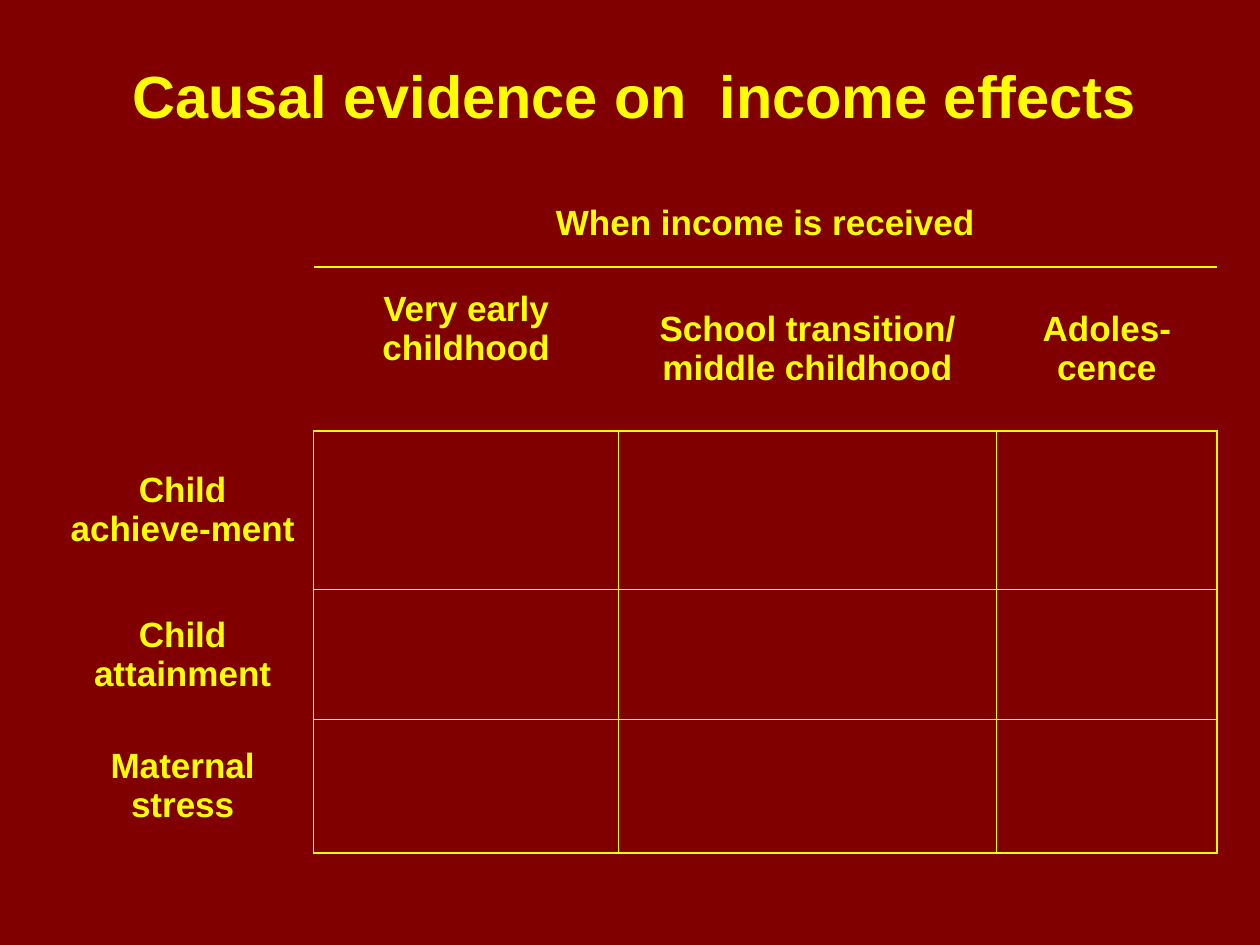
"""Build a slide with an empty evidence grid of outcomes by timing of income."""
from lxml import etree
from pptx import Presentation
from pptx.dml.color import RGBColor
from pptx.enum import text
from pptx.oxml import ns
from pptx.util import Inches, Pt

MAROON = RGBColor(0x80, 0x00, 0x00)
YELLOW = RGBColor(0xFF, 0xFF, 0x00)

COLS = [2.08, 2.42, 3, 1.75]
ROWS = [0.7, 1.3, 1.26, 1.03, 1.06]
LABELS = {
    (0, 1): "When income is received",
    (1, 1): "Very early childhood",
    (1, 2): "School transition/ middle childhood",
    (1, 3): "Adoles-cence",
    (2, 0): "Child achieve-ment",
    (3, 0): "Child attainment",
    (4, 0): "Maternal stress",
}


def write(tf, words, size):
    p = tf.paragraphs[0]
    p.text = words
    p.alignment = text.PP_ALIGN.CENTER
    p.font.name = "Arial"
    p.font.size = Pt(size)
    p.font.bold = True
    p.font.color.rgb = YELLOW


def set_borders(cell, sides):
    tc_pr = cell._tc.get_or_add_tcPr()
    for side in "LRTB":
        ln = etree.SubElement(tc_pr, ns.qn(f"a:ln{side}"), w=str(Pt(1)))
        if side in sides:
            fill = etree.SubElement(ln, ns.qn("a:solidFill"))
            etree.SubElement(fill, ns.qn("a:srgbClr"), val=str(YELLOW))
        else:
            etree.SubElement(ln, ns.qn("a:noFill"))


prs = Presentation()
prs.slide_width, prs.slide_height = Inches(10), Inches(7.5)
s = prs.slides.add_slide(prs.slide_layouts[6])
s.background.fill.solid()
s.background.fill.fore_color.rgb = MAROON

tbl = s.shapes.add_table(len(ROWS), len(COLS), Inches(0.41), Inches(1.42),
                         Inches(sum(COLS)), Inches(sum(ROWS))).table
tbl.first_row = tbl.horz_banding = False
for col, width in zip(tbl.columns, COLS):
    col.width = Inches(width)
for row, height in zip(tbl.rows, ROWS):
    row.height = Inches(height)
tbl.cell(0, 1).merge(tbl.cell(0, 3))

for r in range(len(ROWS)):
    for c in range(len(COLS)):
        cell = tbl.cell(r, c)
        if c == 0:
            sides = "R" if r > 1 else ""
        else:
            sides = ("B", "TB")[r] if r < 2 else "LRTB"
        set_borders(cell, sides)
        cell.fill.background()
        if (r, c) in LABELS:
            write(cell.text_frame, LABELS[r, c], 20)
            cell.vertical_anchor = text.MSO_ANCHOR.MIDDLE
tbl.cell(1, 1).margin_bottom = Inches(0.37)

title = s.shapes.add_textbox(Inches(0.66), Inches(0.42), Inches(8.75), Inches(0.67))
title.text_frame.word_wrap = True
title.text_frame.auto_size = text.MSO_AUTO_SIZE.SHAPE_TO_FIT_TEXT
write(title.text_frame, "Causal evidence on  income effects", 34)

prs.save("out.pptx")
